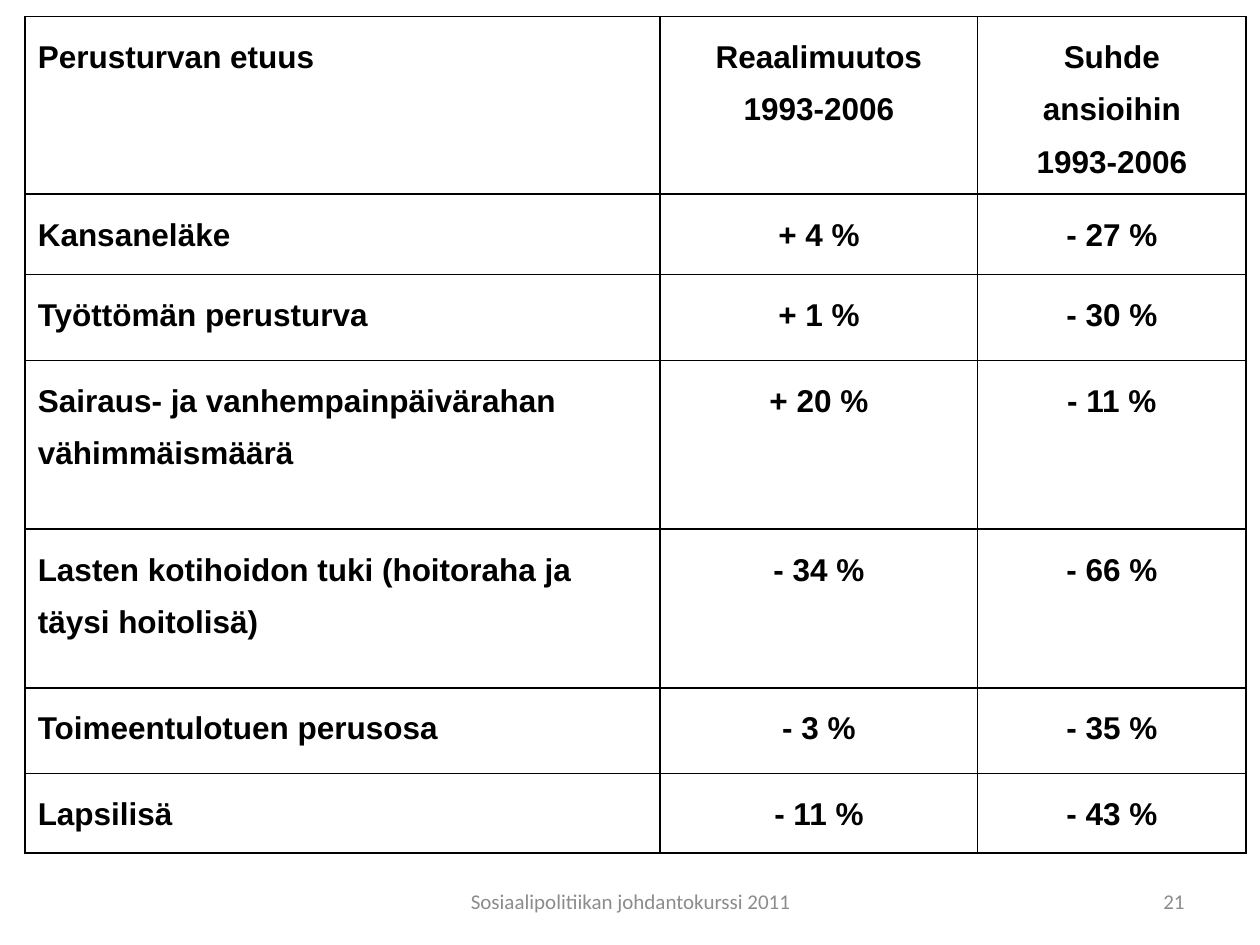
from lxml import etree
from pptx import Presentation
from pptx.dml.color import RGBColor
from pptx.enum.text import MSO_ANCHOR, PP_ALIGN
from pptx.oxml.ns import qn
from pptx.util import Inches, Pt

LEFT, CENTER, RIGHT = PP_ALIGN.LEFT, PP_ALIGN.CENTER, PP_ALIGN.RIGHT
MIDDLE = MSO_ANCHOR.MIDDLE

# Content: a line break in a cell starts a new paragraph
BENEFIT_ROWS = [
    ("Perusturvan etuus", "Reaalimuutos\n1993-2006", "Suhde\nansioihin\n1993-2006"),
    ("Kansaneläke", "+ 4 %", "- 27 %"),
    ("Työttömän perusturva", "+ 1 %", "- 30 %"),
    ("Sairaus- ja vanhempainpäivärahan vähimmäismäärä", "+ 20 %", "- 11 %"),
    ("Lasten kotihoidon tuki (hoitoraha ja\ntäysi hoitolisä)", "- 34 %", "- 66 %"),
    ("Toimeentulotuen perusosa", "- 3 %", "- 35 %"),
    ("Lapsilisä", "- 11 %", "- 43 %"),
]
COLUMN_WIDTHS = [5.04, 2.52, 2.13]
ROW_HEIGHTS = [1.41, 0.64, 0.68, 1.34, 1.26, 0.68, 0.63]
COLUMN_ALIGNMENTS = [LEFT, CENTER, CENTER]
TABLE_LEFT, TABLE_TOP = 0.2, 0.13

# Footer: text, left, width, alignment
FOOTERS = [
    ("Sosiaalipolitiikan johdantokurssi 2011", 3.42, 3.17, CENTER),
    ("21", 7.17, 2.33, RIGHT),
]
FOOTER_TOP, FOOTER_HEIGHT = 6.95, 0.4

TABLE_FONT = {"name": "Arial", "size": Pt(18), "bold": True}
FOOTER_FONT = {"name": "Calibri", "size": Pt(12)}
BLACK, GREY = "000000", "8C8C8C"


def rgb(color):
    return RGBColor.from_string(color)


def write_text(text_frame, text, font, color, paragraph_format):
    text_frame.text = text
    for paragraph in text_frame.paragraphs:
        for name, value in paragraph_format.items():
            setattr(paragraph, name, value)
        for run in paragraph.runs:
            for name, value in font.items():
                setattr(run.font, name, value)
            run.font.color.rgb = rgb(color)


def set_borders(cell, color, width):
    properties = cell._tc.get_or_add_tcPr()
    for position, side in enumerate(("a:lnL", "a:lnR", "a:lnT", "a:lnB")):
        line = etree.Element(qn(side), w=str(width))
        fill = etree.SubElement(line, qn("a:solidFill"))
        etree.SubElement(fill, qn("a:srgbClr"), val=color)
        properties.insert(position, line)


presentation = Presentation()
presentation.slide_width, presentation.slide_height = Inches(10), Inches(7.5)
slide = presentation.slides.add_slide(presentation.slide_layouts[6])

# Footer text and slide number
for text, left, width, alignment in FOOTERS:
    box = slide.shapes.add_textbox(
        Inches(left), Inches(FOOTER_TOP), Inches(width), Inches(FOOTER_HEIGHT))
    box.text_frame.word_wrap = True
    box.text_frame.vertical_anchor = MIDDLE
    write_text(box.text_frame, text, FOOTER_FONT, GREY, {"alignment": alignment})

# Benefit table
table = slide.shapes.add_table(
    len(ROW_HEIGHTS), len(COLUMN_WIDTHS), Inches(TABLE_LEFT), Inches(TABLE_TOP),
    Inches(sum(COLUMN_WIDTHS)), Inches(sum(ROW_HEIGHTS))).table
table.first_row = table.horz_banding = False
for column, width in zip(table.columns, COLUMN_WIDTHS):
    column.width = Inches(width)
for row, height, texts in zip(table.rows, ROW_HEIGHTS, BENEFIT_ROWS):
    row.height = Inches(height)
    for cell, text, alignment in zip(row.cells, texts, COLUMN_ALIGNMENTS):
        cell.fill.background()
        set_borders(cell, BLACK, Pt(1))
        write_text(cell.text_frame, text, TABLE_FONT, BLACK,
                   {"alignment": alignment, "line_spacing": Pt(30)})

presentation.save("out.pptx")
